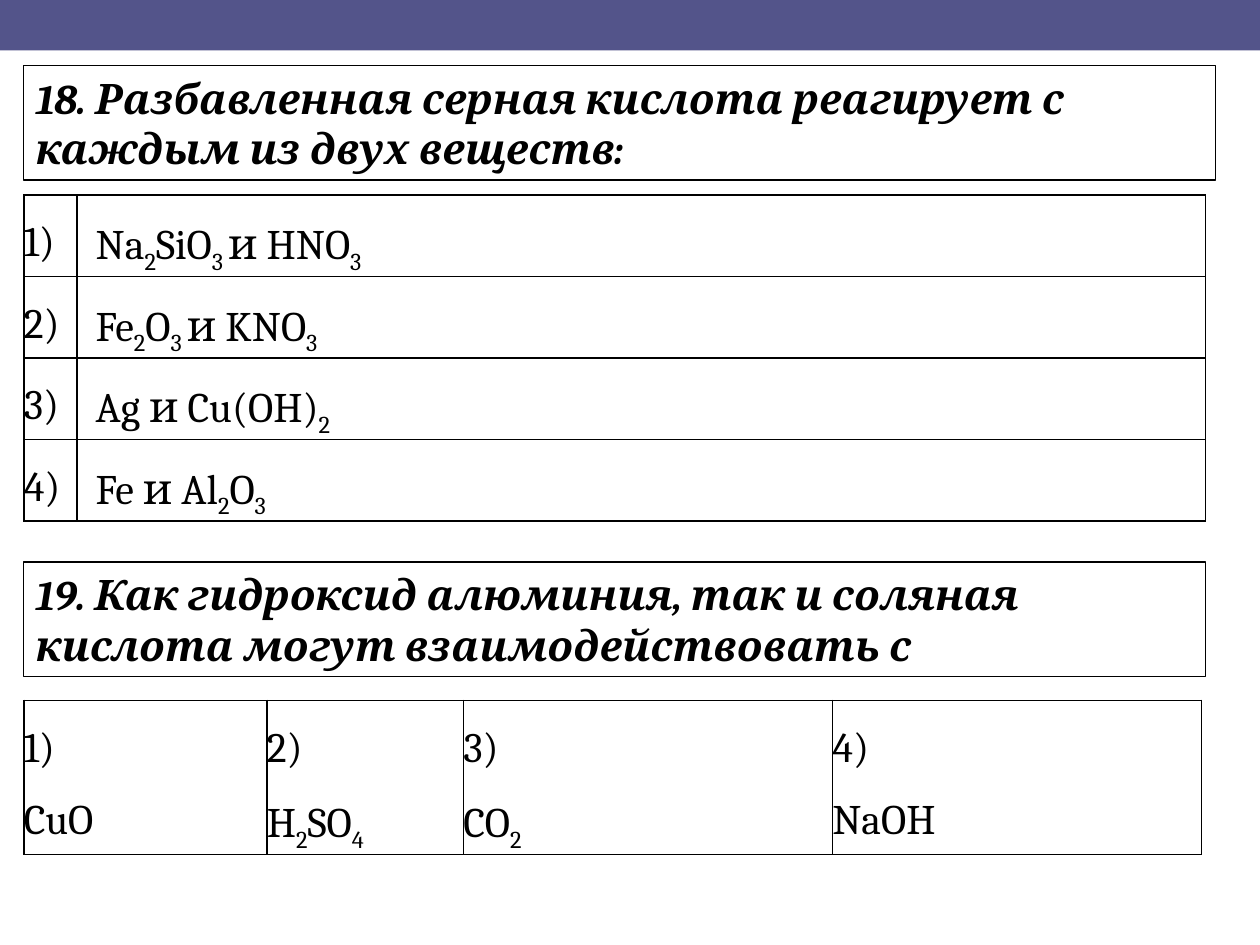
from pptx import Presentation
from pptx.dml.color import RGBColor
from pptx.enum.shapes import MSO_SHAPE
from pptx.enum.text import MSO_ANCHOR, PP_ALIGN
from pptx.oxml import parse_xml
from pptx.oxml.ns import nsdecls
from pptx.util import Cm, Pt

RECT = MSO_SHAPE.RECTANGLE
MIDDLE = MSO_ANCHOR.MIDDLE
LEFT = PP_ALIGN.LEFT

BLACK = RGBColor(0x00, 0x00, 0x00)
WHITE = RGBColor(0xFF, 0xFF, 0xFF)
VIOLET = RGBColor(0x53, 0x54, 0x8A)

MARGIN = 0.48


class QuizSlide:
    font, size, spacing = "Cambria", Pt(24), 1.5

    def __init__(self, prs):
        self.s = prs.slides.add_slide(prs.slide_layouts[6])

    def box(self, x, y, w, h):
        sp = self.s.shapes.add_shape(RECT, Cm(x), Cm(y), Cm(w), Cm(h))
        sp.shadow.inherit = False
        return sp

    def band(self, w, h):
        sp = self.box(0, 0, w, h)
        sp.fill.solid()
        sp.fill.fore_color.rgb = VIOLET
        sp.line.fill.background()

    def run(self, p, text, bold=False, sub=False):
        r = p.add_run()
        r.text = text
        f = r.font
        f.name, f.size, f.bold, f.italic = self.font, self.size, bold, bold
        f.color.rgb = BLACK
        if sub:
            r._r.get_or_add_rPr().set("baseline", "-25000")

    def formula(self, p, text):
        """Bars separate normal and subscript parts, in turn."""
        p.line_spacing = self.spacing
        for i, part in enumerate(text.split("|")):
            if part:
                self.run(p, part, sub=i % 2 == 1)

    def question(self, y, w, text):
        sp = self.box(MARGIN, y, w, 2.31)
        sp.fill.background()
        sp.line.color.rgb = BLACK
        sp.line.width = Pt(0.75)
        tf = sp.text_frame
        tf.word_wrap = True
        tf.vertical_anchor = MIDDLE
        p = tf.paragraphs[0]
        p.alignment = LEFT
        self.run(p, text, bold=True)

    def cell(self, cell, lines, indent):
        cell.margin_left = Cm(indent)
        cell.margin_right = cell.margin_top = cell.margin_bottom = 0
        tcPr = cell._tc.get_or_add_tcPr()
        for side in "LRTB":
            tcPr.append(parse_xml(
                f'<a:ln{side} {nsdecls("a")} w="12700"><a:solidFill>'
                f'<a:srgbClr val="{BLACK}"/></a:solidFill></a:ln{side}>'))
        cell.fill.solid()
        cell.fill.fore_color.rgb = WHITE
        tf = cell.text_frame
        for i, line in enumerate(lines):
            self.formula(tf.add_paragraph() if i else tf.paragraphs[0], line)

    def table(self, y, widths, row_h, rows, indents):
        frame = self.s.shapes.add_table(
            len(rows), len(widths), Cm(MARGIN), Cm(y),
            Cm(sum(widths)), Cm(row_h * len(rows)))
        tbl = frame.table
        tbl.first_row = tbl.horz_banding = False
        for col, w in zip(tbl.columns, widths):
            col.width = Cm(w)
        for i, row in enumerate(rows):
            tbl.rows[i].height = Cm(row_h)
            for j, lines in enumerate(row):
                self.cell(tbl.cell(i, j), lines, indents[j])


def main():
    prs = Presentation()
    prs.slide_width, prs.slide_height = Cm(25.4), Cm(19.05)
    quiz = QuizSlide(prs)

    # Top band
    quiz.band(25.4, 1.02)

    # Question 18: one answer per row
    quiz.question(1.32, 24.03, "18. Разбавленная серная кислота реагирует с "
                  "каждым из двух веществ:")
    pairs = ["Na|2|SiO|3 |и HNO|3", "Fe|2|O|3 |и KNO|3",
             "Ag и Cu(OH)|2", "Fe и Al|2|O|3"]
    quiz.table(3.93, [1.07, 22.75], 1.64,
               [[[f"{n})"], [pair]] for n, pair in enumerate(pairs, 1)],
               [0, 0.38])

    # Question 19: one answer per column
    quiz.question(11.33, 23.83, "19. Как гидроксид алюминия, так и соляная "
                  "кислота могут взаимодействовать с")
    substances = ["CuO", "H|2|SO|4", "CO|2", "NaOH"]
    quiz.table(14.12, [4.9, 3.96, 7.44, 7.44], 3.1,
               [[[f"{n})", item] for n, item in enumerate(substances, 1)]],
               [0] * 4)

    prs.save("out.pptx")


if __name__ == "__main__":
    main()
